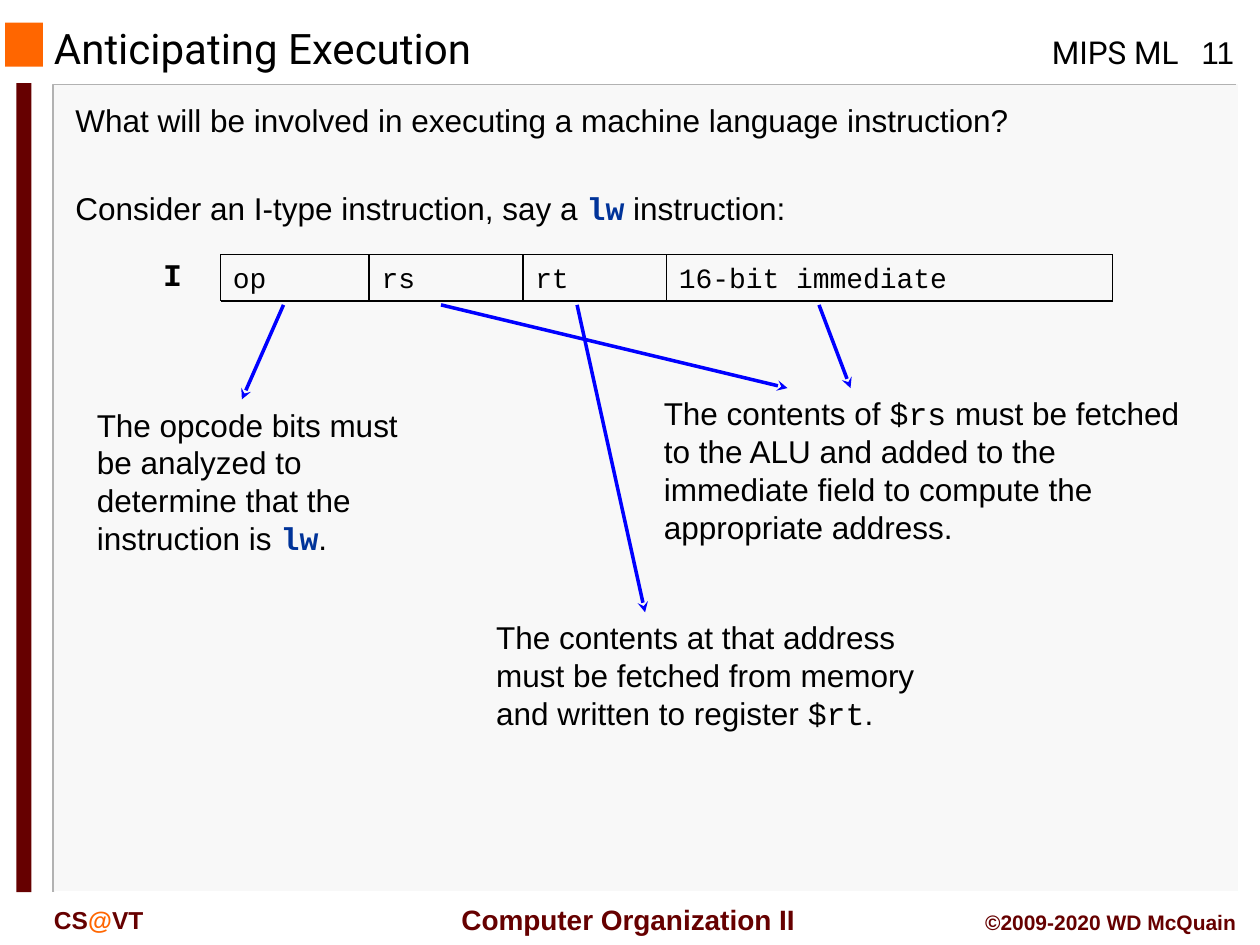
import pptx
import pptx.util
import pptx.dml.color
import pptx.enum.shapes
import pptx.enum.text
import pptx.oxml.ns
from lxml import etree

Inches = pptx.util.Inches
Pt = pptx.util.Pt
ALIGN = pptx.enum.text.PP_ALIGN
ANCHOR = pptx.enum.text.MSO_ANCHOR

COLORS = {
    "black": "000000",
    "panel": "F8F8F8",
    "edge": "B2B2B2",
    "white": "FFFFFF",
    "orange": "FF6600",
    "maroon": "660000",
    "code": "003399",
    "arrow": "0000FF",
}
SANS, MONO, HEADING = "Arial", "Courier New", "Roboto"
FIELDS = ["op", "rs", "rt", "16-bit immediate"]
FIELD_EDGES = [1.75, 2.93, 4.15, 5.29, 8.83]
FIELD_TOP, FIELD_BOTTOM = 2.02, 2.39
ARROW_TOP = 2.42
MNEMONIC = ("lw", MONO, "code", True)


def rgb(name):
    return pptx.dml.color.RGBColor.from_string(COLORS[name])


def add_block(slide, left, top, width, height, color):
    shape = slide.shapes.add_shape(
        pptx.enum.shapes.MSO_SHAPE.RECTANGLE,
        Inches(left), Inches(top), Inches(width), Inches(height))
    shape.shadow.inherit = False
    shape.fill.solid()
    shape.fill.fore_color.rgb = rgb(color)
    shape.line.fill.background()


def add_corner(slide, points, color):
    start, *rest = [(Inches(x), Inches(y)) for x, y in points]
    builder = slide.shapes.build_freeform(*start)
    builder.add_line_segments(rest, close=False)
    shape = builder.convert_to_shape()
    shape.shadow.inherit = False
    shape.fill.background()
    shape.line.color.rgb = rgb(color)
    shape.line.width = Pt(1)


def add_line(slide, start, end, color="black", width=1, arrow=False):
    connector = slide.shapes.add_connector(
        pptx.enum.shapes.MSO_CONNECTOR.STRAIGHT,
        *[Inches(value) for value in start + end])
    connector.line.color.rgb = rgb(color)
    connector.line.width = Pt(width)
    if arrow:
        line = connector.line._get_or_add_ln()
        etree.SubElement(line, pptx.oxml.ns.qn("a:tailEnd"), type="stealth")
    properties = connector._element.spPr
    etree.SubElement(properties, pptx.oxml.ns.qn("a:effectLst"))


def write_runs(paragraph, runs, size):
    for text, font, color, bold in runs:
        run = paragraph.add_run()
        run.text = text
        run.font.name = font
        run.font.size = Pt(size)
        run.font.bold = bold
        run.font.color.rgb = rgb(color)


def add_text(slide, left, top, width, height, paragraphs, size=18,
             align=ALIGN.LEFT, anchor=ANCHOR.TOP, wrap=True, gap=0):
    box = slide.shapes.add_textbox(
        Inches(left), Inches(top), Inches(width), Inches(height))
    frame = box.text_frame
    frame.word_wrap = wrap
    frame.vertical_anchor = anchor
    for index, runs in enumerate(paragraphs):
        paragraph = frame.add_paragraph() if index else frame.paragraphs[0]
        paragraph.alignment = align
        paragraph.space_before = Pt(gap if index else 0)
        write_runs(paragraph, runs, size)
    return box


def plain(text, font=SANS, color="black", bold=False):
    return (text, font, color, bold)


def add_frame(slide):
    add_block(slide, 0.43, 0.67, 9.4, 6.41, "panel")
    add_corner(slide, [(9.81, 0.67), (0.42, 0.67), (0.42, 7.08)], "edge")
    add_corner(slide, [(9.83, 0.67), (9.83, 7.08), (0.44, 7.08)], "white")
    add_block(slide, 0.04, 0.18, 0.3, 0.35, "orange")
    add_block(slide, 0.13, 0.66, 0.12, 6.42, "maroon")


def add_header_and_footer(slide):
    add_text(slide, 0.33, 0.19, 6.33, 0.38,
             [[plain("Anticipating Execution", HEADING)]], 24,
             anchor=ANCHOR.MIDDLE)
    add_text(slide, 8.25, 0.21, 1.24, 0.4,
             [[plain("MIPS ML", HEADING)]], wrap=False)
    add_text(slide, 9.33, 0.21, 0.67, 0.4, [[plain("11")]], align=ALIGN.CENTER)
    add_text(slide, 3.48, 7.11, 2.95, 0.37,
             [[plain(" Computer Organization II", SANS, "maroon", True)]], 16,
             ALIGN.CENTER, ANCHOR.MIDDLE, wrap=False)
    add_text(slide, 0.33, 7.13, 1.5, 0.33,
             [[plain("CS", SANS, "maroon", True),
               plain("@", SANS, "orange", True),
               plain("VT", SANS, "maroon", True)]], 14)
    add_text(slide, 7.33, 7.17, 2.58, 0.3,
             [[plain("©2009-2020 WD McQuain", SANS, "maroon", True)]], 12,
             ALIGN.RIGHT)


def add_instruction_format(slide):
    label = add_text(slide, 1.15, 2, 0.44, 0.35,
                     [[plain("I", MONO, "black", True)]], align=ALIGN.CENTER)
    frame = label.text_frame
    frame.margin_left = frame.margin_right = Inches(0.02)
    frame.margin_top = frame.margin_bottom = Inches(0.03)
    frame.paragraphs[0].line_spacing = Pt(21)
    for name, left, right in zip(FIELDS, FIELD_EDGES, FIELD_EDGES[1:]):
        add_text(slide, left, FIELD_TOP, right - left, FIELD_BOTTOM - FIELD_TOP,
                 [[plain(name, MONO)]], 16)
    for y in (FIELD_TOP, FIELD_BOTTOM):
        add_line(slide, (FIELD_EDGES[0], y), (FIELD_EDGES[-1], y))
    for x in FIELD_EDGES:
        add_line(slide, (x, FIELD_TOP), (x, FIELD_BOTTOM))


def add_note(slide, left, top, width, height, runs, arrows):
    add_text(slide, left, top, width, height, [runs])
    for start_x, end_x in arrows:
        add_line(slide, (start_x, ARROW_TOP), (end_x, top), "arrow", 2, True)


def main():
    presentation = pptx.Presentation()
    presentation.slide_width = Inches(10)
    presentation.slide_height = Inches(7.5)
    slide = presentation.slides.add_slide(presentation.slide_layouts[6])

    add_frame(slide)
    add_header_and_footer(slide)
    add_text(slide, 0.5, 0.75, 9.25, 1.12, [
        [plain("What will be involved in executing a machine language instruction?")],
        [plain("Consider an I-type instruction, say a "), MNEMONIC,
         plain(" instruction:")],
    ], gap=29)
    add_instruction_format(slide)

    add_note(slide, 0.67, 3.17, 2.83, 1.34, [
        plain("The opcode bits must be analyzed to determine that the instruction is "),
        MNEMONIC, plain("."),
    ], [(2.25, 1.92)])
    add_note(slide, 5.17, 3.08, 4.33, 1.31, [
        plain("The contents of "), plain("$rs", MONO),
        plain(" must be fetched to the ALU and added to the immediate field "
              "to compute the appropriate address."),
    ], [(3.5, 6.25), (6.5, 6.75)])
    add_note(slide, 3.84, 4.86, 3.66, 1, [
        plain("The contents at that address must be fetched from memory "
              "and written to register "),
        plain("$rt", MONO), plain("."),
    ], [(4.58, 5.12)])

    presentation.save("out.pptx")


if __name__ == "__main__":
    main()
